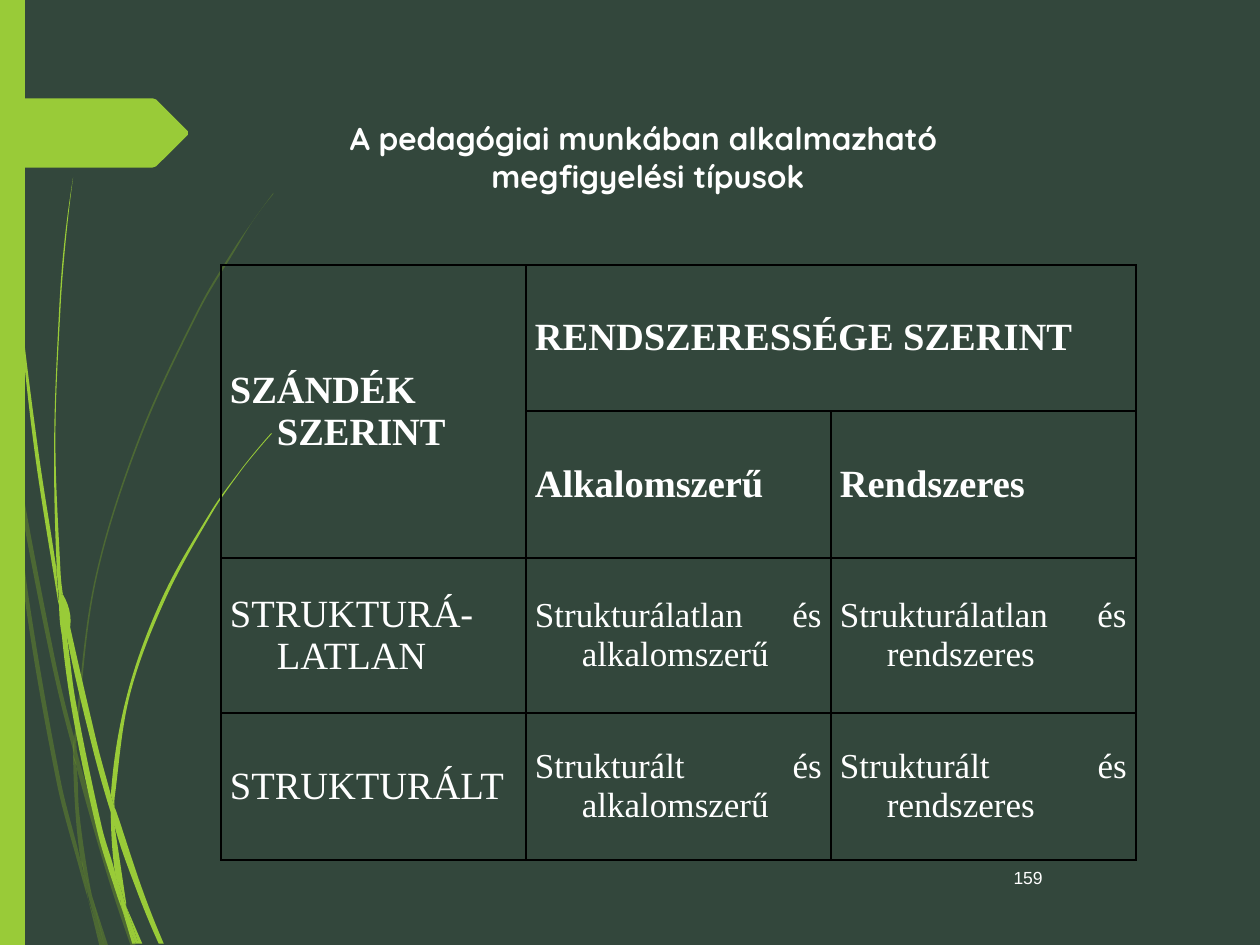
import pptx
import pptx.util
import pptx.dml.color
import pptx.enum.shapes
import pptx.enum.text
import pptx.oxml
import pptx.oxml.ns
import lxml.etree

PX = 914400 // 126
CENT = 9144  # hundredth of an inch, the grid of the freeform outlines
COLORS = {"back": "33473C", "lime": "99CB38", "moss": "739A28",
          "text": "FFFFFF", "line": "000000"}
ALIGN = pptx.enum.text.PP_ALIGN
ANCHOR = pptx.enum.text.MSO_ANCHOR
RGB = pptx.dml.color.RGBColor.from_string
Pt = pptx.util.Pt
qn = pptx.oxml.ns.qn

# Each blade of grass: its two edges, down one side and back up the other
MOSS = [
    ([(8, 350), (6, 322), (0, 282)], [(0, 299), (7, 344), (8, 350)]),
    ([(59, 586), (43, 520), (10, 345)], [(12, 376), (40, 522), (59, 599)]),
    ([(61, 610), (85, 694), (104, 751)],
     [(108, 751), (88, 692), (64, 607), (61, 596)]),
    ([(73, 711), (83, 751)], [(86, 751), (73, 711)]),
    ([(8, 350), (12, 376), (22, 469), (48, 619), (64, 683), (70, 714)],
     [(70, 714), (64, 693), (45, 621), (19, 470), (8, 350)]),
    ([(58, 599), (60, 646), (64, 683), (67, 692), (73, 711)],
     [(72, 706), (63, 646), (61, 610), (58, 599)]),
    ([(61, 596), (61, 584), (76, 462), (111, 349), (159, 245), (187, 198),
      (201, 175), (217, 154)],
     [(217, 153), (201, 175), (186, 197), (158, 244), (110, 348), (75, 461),
      (59, 584), (59, 586)]),
    ([(70, 714), (79, 751)], [(82, 751), (70, 714)]),
    ([(61, 610), (61, 596)], [(59, 586), (58, 599), (61, 608)]),
    ([(65, 683), (69, 707), (82, 751)], [(83, 751), (73, 711), (67, 692)]),
]
LIME = [
    ([(2, 0), (3, 48), (5, 110), (14, 233), (27, 355), (46, 477), (47, 481)],
     [(45, 457), (45, 453), (30, 355), (15, 232), (6, 109), (4, 48), (3, 0)]),
    ([(50, 472), (53, 505), (73, 592), (88, 645)],
     [(88, 633), (88, 631), (77, 590), (50, 472)]),
    ([(91, 641), (91, 656), (109, 708), (126, 749)],
     [(130, 749), (113, 706), (94, 649), (91, 641)]),
    ([(47, 477), (56, 557), (77, 659), (92, 708), (97, 722)],
     [(96, 717), (91, 691), (81, 657), (60, 556), (53, 505), (47, 477)]),
    ([(50, 472), (48, 453), (44, 349), (48, 245), (52, 193), (58, 141)],
     [(58, 141), (51, 193), (47, 245), (43, 349), (45, 449), (49, 472)]),
    ([(100, 719), (110, 749)], [(113, 749), (100, 719)]),
    ([(47, 477), (53, 505), (50, 472)], [(49, 472), (45, 449), (45, 453)]),
    ([(91, 641), (91, 633), (103, 552), (131, 476), (169, 406), (191, 374),
      (203, 359), (216, 344)],
     [(215, 344), (203, 358), (191, 373), (168, 405), (129, 474), (101, 551),
      (88, 631)]),
    ([(97, 722), (105, 749)], [(108, 749), (97, 722)]),
    ([(88, 645), (91, 691), (96, 706), (100, 719)],
     [(100, 716), (91, 656), (90, 651), (88, 645)]),
    ([(88, 645), (91, 656), (91, 641)], [(88, 631), (88, 633)]),
    ([(91, 691), (96, 717), (97, 722), (108, 749)],
     [(110, 749), (100, 719), (96, 706), (91, 691)]),
]
ARROW = [(0, 78), (121, 78), (124, 79), (149, 104), (149, 107),
         (124, 132), (121, 133), (0, 133)]


def outline(shapes, pts, color):
    """Closed freeform with a plain fill and no line."""
    pts = [(x * CENT, y * CENT) for x, y in pts]
    pen = shapes.build_freeform(*pts[0])
    pen.add_line_segments(pts[1:], close=True)
    shape = pen.convert_to_shape()
    shape.shadow.inherit = False
    shape.fill.solid()
    shape.fill.fore_color.rgb = RGB(COLORS[color])
    shape.line.fill.background()
    return shape


def bend(shape, edge, lines):
    """Turn the straight segments of one edge into smooth cubic curves."""
    pts = [complex(x * CENT - shape.left, y * CENT - shape.top) for x, y in edge]
    if len(pts) < 3:
        return
    ways = [(c - a) / abs(c - a) for a, c in zip(pts, pts[2:])]
    first = pts[1] - ways[0] * abs(pts[1] - pts[0]) / 2 - pts[0]
    last = pts[-1] - pts[-2] - ways[-1] * abs(pts[-1] - pts[-2]) / 2
    ways = [first / abs(first), *ways, last / abs(last)]
    for i, line in enumerate(lines):
        a, b = pts[i], pts[i + 1]
        reach = abs(b - a) / 3
        line.tag = qn("a:cubicBezTo")
        for n, p in enumerate((a + ways[i] * reach, b - ways[i + 1] * reach)):
            dot = lxml.etree.Element(qn("a:pt"), x=str(round(p.real)),
                                     y=str(round(p.imag)))
            line.insert(n, dot)


deck = pptx.Presentation()
deck.slide_width, deck.slide_height = 1260 * PX, 945 * PX
slide = deck.slides.add_slide(deck.slide_layouts[5])
slide.background.fill.solid()
slide.background.fill.fore_color.rgb = RGB(COLORS["back"])

# Grass, side bar and arrow
for color, blades in (("moss", MOSS), ("lime", LIME)):
    group = slide.shapes.add_group_shape()
    for down, back in blades:
        meet = down[-1] == back[0]
        blade = outline(group.shapes, down + back[meet:], color)
        lines = blade._element.findall(".//" + qn("a:lnTo"))
        bend(blade, down, lines[:len(down) - 1])
        bend(blade, back, lines[len(down) - meet:])
        if color == "moss":
            tone = blade._element.spPr.find(".//" + qn("a:srgbClr"))
            lxml.etree.SubElement(tone, qn("a:alpha"), val="40000")

bar = slide.shapes.add_shape(pptx.enum.shapes.MSO_SHAPE.RECTANGLE,
                             0, 0, 25 * PX, 945 * PX)
bar.shadow.inherit = False
bar.fill.solid()
bar.fill.fore_color.rgb = RGB(COLORS["lime"])
bar.line.fill.background()
outline(slide.shapes, ARROW, "lime")

# Title and page number
title = slide.shapes.title
title.left, title.top, title.width, title.height = (
    206 * PX, 113 * PX, 875 * PX, 127 * PX)
title.text_frame.text = "A pedagógiai munkában alkalmazható\n megfigyelési típusok"
title.text_frame.vertical_anchor = ANCHOR.TOP
page = slide.shapes.add_textbox(858 * PX, 861 * PX, 197 * PX, 63 * PX)
page.text_frame.word_wrap = True
page.text_frame.text = "159"
for box, face, size, align in ((title, "Quicksand", 18, ALIGN.CENTER),
                               (page, "Arial", 10, ALIGN.RIGHT)):
    for para in box.text_frame.paragraphs:
        para.alignment = align
        para.font.name, para.font.size = face, Pt(size)
        para.font.bold = box is title
        para.font.color.rgb = RGB(COLORS["text"])

# Table of observation types
ROWS = [
    ["SZÁNDÉK SZERINT", "RENDSZERESSÉGE SZERINT", ""],
    ["", "Alkalomszerű", "Rendszeres"],
    ["STRUKTURÁ-LATLAN", "Strukturálatlan és alkalomszerű",
     "Strukturálatlan és rendszeres"],
    ["STRUKTURÁLT", "Strukturált és alkalomszerű", "Strukturált és rendszeres"],
]
table = slide.shapes.add_table(4, 3, 221 * PX, 265 * PX, 915 * PX, 595 * PX).table
table.first_row = table.horz_banding = False
for col in table.columns:
    col.width = 305 * PX
for row, high in zip(table.rows, (146, 147, 155, 147)):
    row.height = high * PX
table.cell(0, 0).merge(table.cell(1, 0))
table.cell(0, 1).merge(table.cell(0, 2))

for r, words in enumerate(ROWS):
    for c, word in enumerate(words):
        cell = table.cell(r, c)
        cell.fill.background()
        cell.vertical_anchor = ANCHOR.MIDDLE
        cell.margin_left = cell.margin_right = 9 * PX
        cell.margin_top = cell.margin_bottom = 6 * PX
        props = cell._tc.get_or_add_tcPr()
        for i, side in enumerate(("lnL", "lnR", "lnT", "lnB")):
            line = lxml.etree.Element(qn("a:" + side), w=str(Pt(1)))
            fill = lxml.etree.SubElement(line, qn("a:solidFill"))
            lxml.etree.SubElement(fill, qn("a:srgbClr"), val=COLORS["line"])
            props.insert(i, line)
        if not word:
            continue
        body = r > 1 and c > 0
        cell.text = word
        para = cell.text_frame.paragraphs[0]
        para.alignment = ALIGN.JUSTIFY if body or r == c == 0 else ALIGN.LEFT
        para.font.name, para.font.size = "Times New Roman", Pt(20 if body else 22)
        para.font.bold = r < 2
        para.font.color.rgb = RGB(COLORS["text"])
        indent = para._p.get_or_add_pPr()
        indent.set("marL", str(47 * PX))
        indent.set("indent", str(-47 * PX))

deck.save("out.pptx")
